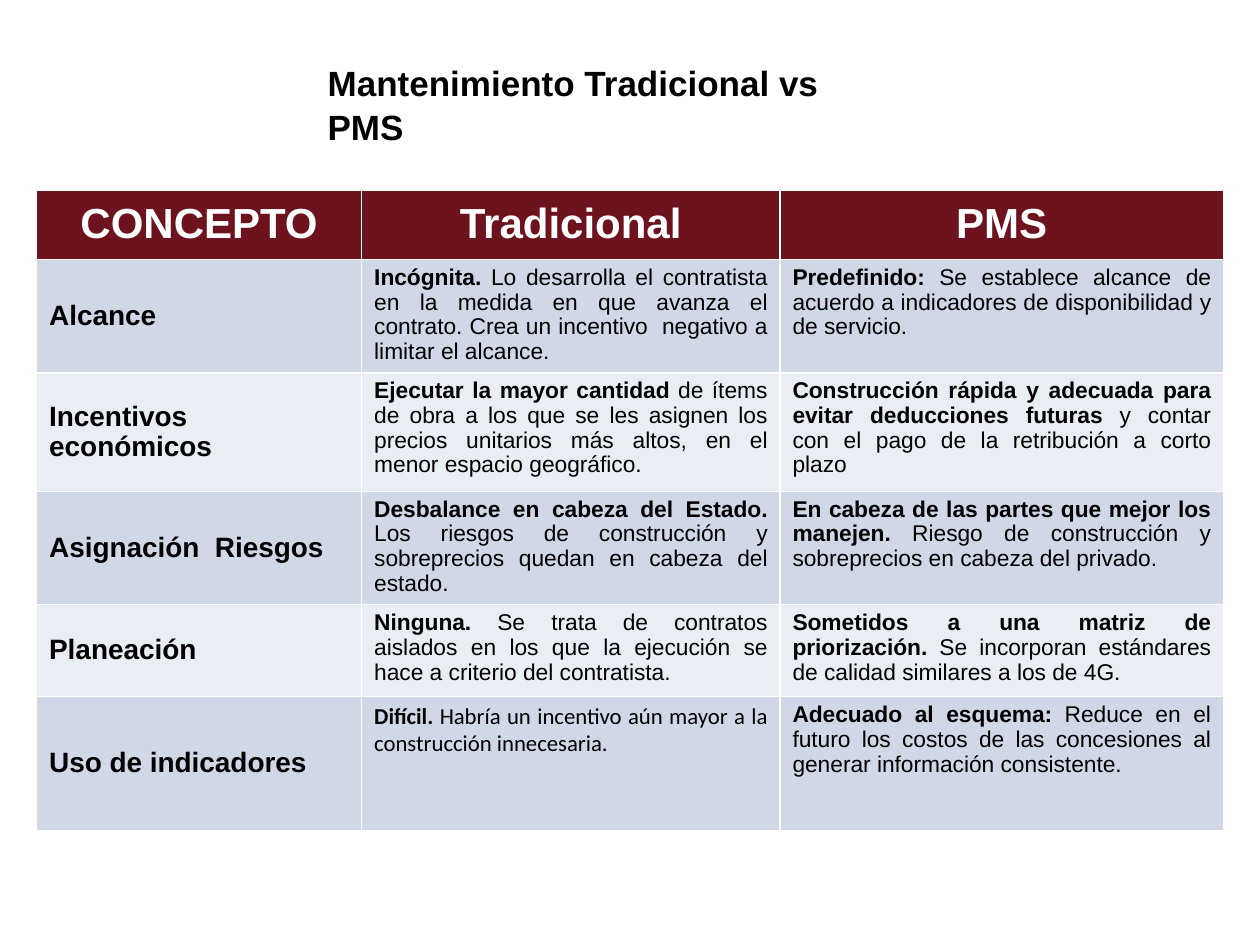
from pptx import Presentation
from pptx.dml.color import RGBColor
from pptx.enum.text import MSO_ANCHOR, MSO_AUTO_SIZE, PP_ALIGN
from pptx.util import Inches, Pt

LEFT, CENTER, JUSTIFY = PP_ALIGN.LEFT, PP_ALIGN.CENTER, PP_ALIGN.JUSTIFY
TOP, MIDDLE = MSO_ANCHOR.TOP, MSO_ANCHOR.MIDDLE
NO_FIT = MSO_AUTO_SIZE.NONE

COLORS = {"header": "6D131E", "odd": "D0D8E8", "even": "E9EDF4",
          "text": "000000", "light": "FFFFFF"}
COLUMN_WIDTHS = [2.58, 3.32, 3.52]
ROW_HEIGHTS = [0.55, 0.9, 0.94, 0.9, 0.73, 1.06]
TABLE_LEFT, TABLE_TOP = 0.29, 1.51

TITLE = "Mantenimiento Tradicional vs PMS"
HEADERS = ["CONCEPTO", "Tradicional", "PMS"]
COMPARISON = [
    ("Alcance",
     ("Incógnita. ", "Lo desarrolla el contratista en la medida en que avanza el contrato. "
      "Crea un incentivo  negativo a limitar el alcance."),
     ("Predefinido: ", "Se establece alcance de acuerdo a indicadores de disponibilidad "
      "y de servicio.")),
    ("Incentivos económicos",
     ("Ejecutar la mayor cantidad ", "de ítems de obra a los que se les asignen los precios "
      "unitarios más altos, en el menor espacio geográfico."),
     ("Construcción rápida y adecuada para evitar deducciones futuras",
      " y contar con el pago de la retribución a corto plazo")),
    ("Asignación  Riesgos",
     ("Desbalance en cabeza del Estado. ", "Los riesgos de construcción y sobreprecios "
      "quedan en cabeza del estado."),
     ("En cabeza de las partes que mejor los manejen.",
      " Riesgo de construcción y sobreprecios en cabeza del privado.")),
    ("Planeación",
     ("Ninguna. ", "Se trata de contratos aislados en los que la ejecución se hace "
      "a criterio del contratista."),
     ("Sometidos a una matriz de priorización. ",
      "Se incorporan estándares de calidad similares a los de 4G.")),
    ("Uso de indicadores",
     ("Difícil. ", "Habría un incentivo aún mayor a la construcción innecesaria."),
     ("Adecuado al esquema: ", "Reduce en el futuro los costos de las concesiones "
      "al generar información consistente.")),
]


def write(p, parts, size, color="text", align=LEFT, font="Arial", spacing=0.97):
    """Fill a paragraph with a bold lead and, after it, regular text."""
    p.alignment = align
    p.line_spacing = spacing
    for i, text in enumerate(parts):
        r = p.add_run()
        r.text = text
        r.font.name = font
        r.font.size = Pt(size)
        r.font.bold = i == 0
        r.font.color.rgb = RGBColor.from_string(COLORS[color])


def add_title(s):
    """Place and format the title placeholder."""
    sp = s.shapes.title
    sp.left, sp.top, sp.width, sp.height = map(Inches, (2.5, 0.2, 4.51, 1.25))
    tf = sp.text_frame
    tf.word_wrap = True
    tf.auto_size = NO_FIT
    tf.vertical_anchor = MIDDLE
    write(tf.paragraphs[0], [TITLE], 20, spacing=1.04)


def fill_cell(cell, fill, anchor, parts, size, **style):
    """Colour a table cell and write its text."""
    cell.fill.solid()
    cell.fill.fore_color.rgb = RGBColor.from_string(COLORS[fill])
    cell.vertical_anchor = anchor
    write(cell.text_frame.paragraphs[0], parts, size, **style)


def add_comparison(s):
    """Add the table that compares both maintenance schemes."""
    frame = s.shapes.add_table(
        len(ROW_HEIGHTS), len(COLUMN_WIDTHS), Inches(TABLE_LEFT), Inches(TABLE_TOP),
        Inches(sum(COLUMN_WIDTHS)), Inches(sum(ROW_HEIGHTS)))
    table = frame.table
    for column, width in zip(table.columns, COLUMN_WIDTHS):
        column.width = Inches(width)
    for row, height in zip(table.rows, ROW_HEIGHTS):
        row.height = Inches(height)
    for col, header in enumerate(HEADERS):
        fill_cell(table.cell(0, col), "header", MIDDLE, [header], 24,
                  color="light", align=CENTER)
    for row, (concept, *schemes) in enumerate(COMPARISON, 1):
        fill = "odd" if row % 2 else "even"
        fill_cell(table.cell(row, 0), fill, MIDDLE, [concept], 16)
        for col, parts in enumerate(schemes, 1):
            font = "Calibri" if (row, col) == (len(COMPARISON), 1) else "Arial"
            fill_cell(table.cell(row, col), fill, TOP, parts, 13,
                      align=JUSTIFY, font=font)


def main():
    """Build the slide and save it."""
    prs = Presentation()
    prs.slide_width, prs.slide_height = Inches(10), Inches(7.5)
    s = prs.slides.add_slide(prs.slide_layouts[5])
    add_title(s)
    add_comparison(s)
    prs.save("out.pptx")


if __name__ == "__main__":
    main()
